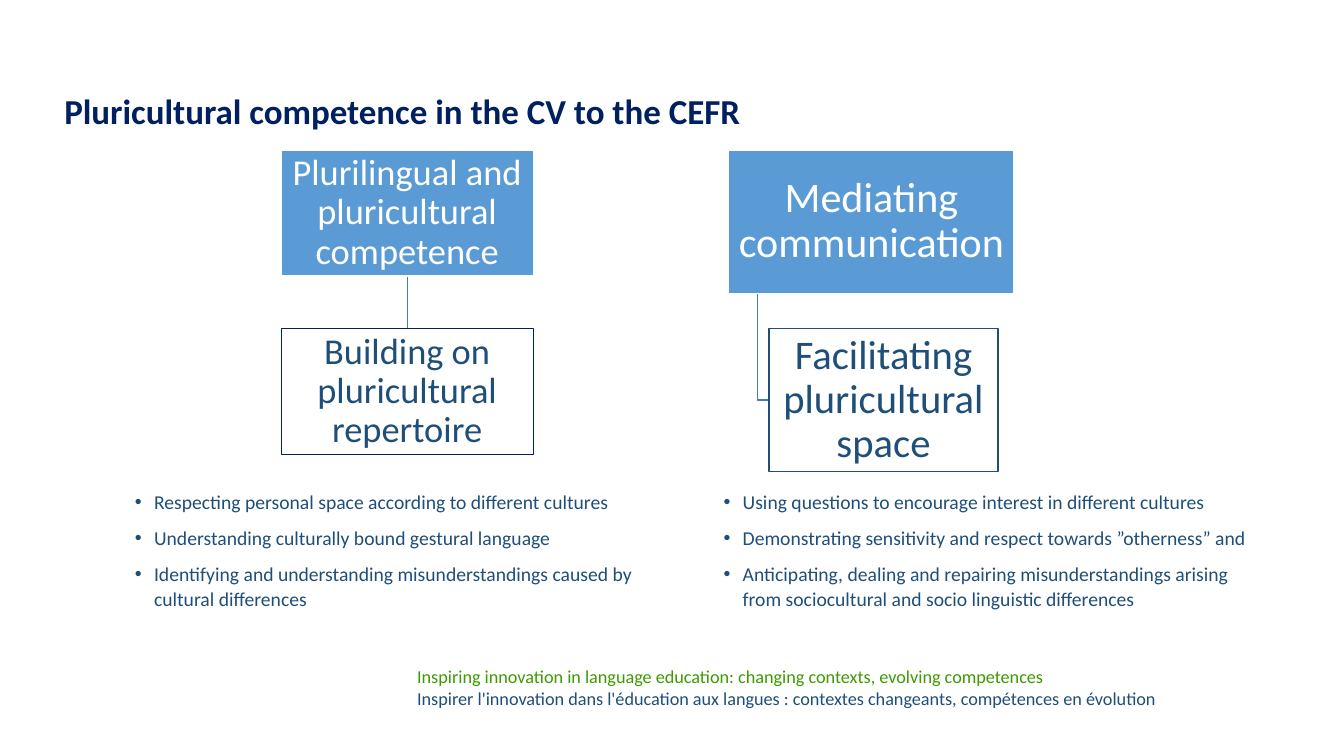
from pptx import Presentation
from pptx import util as u
from pptx.dml.color import RGBColor
from pptx.enum import shapes, text
from pptx.oxml.ns import qn
from lxml import etree

NAVY = RGBColor(0x00, 0x20, 0x60)
DARK = RGBColor(0x1F, 0x4E, 0x79)
BLUE = RGBColor(0x5B, 0x9B, 0xD5)
STEEL = RGBColor(0x49, 0x7C, 0xAB)
GREEN = RGBColor(0x3C, 0x9B, 0x00)
WHITE = RGBColor(0xFF, 0xFF, 0xFF)

deck = Presentation()
deck.slide_width, deck.slide_height = u.Inches(13.33), u.Inches(7.5)
slide = deck.slides.add_slide(deck.slide_layouts[6])
items = slide.shapes

# Grid of 100 columns by 100 rows
COL, ROW = deck.slide_width / 100, deck.slide_height / 100


def place(x, y, w, h):
    return [round(n) for n in (x * COL, y * ROW, w * COL, h * ROW)]


def write(shape, lines, size, colors, bold=False, align=None, anchor="TOP",
          pad=(0.1, 0.05), space=None, after=None, bullet=False):
    frame = shape.text_frame
    frame.word_wrap = True
    frame.vertical_anchor = text.MSO_ANCHOR[anchor]
    frame.margin_left = frame.margin_right = u.Inches(pad[0])
    frame.margin_top = frame.margin_bottom = u.Inches(pad[1])
    for i, line in enumerate(lines):
        para = frame.add_paragraph() if i else frame.paragraphs[0]
        para.alignment, para.line_spacing = align, space
        if after:
            para.space_after = u.Pt(after)
        if bullet:
            props = para._p.get_or_add_pPr()
            indent = u.Inches(0.19)
            props.set("marL", str(indent))
            props.set("indent", str(-indent))
            etree.SubElement(props, qn("a:buFont")).set("typeface", "Arial")
            etree.SubElement(props, qn("a:buChar")).set("char", "•")
        run = para.add_run()
        run.text = line
        run.font.name, run.font.size, run.font.bold = "Calibri", u.Pt(size), bold
        run.font.color.rgb = colors[i % len(colors)]


# Footer in two languages
write(items.add_textbox(*place(30.3, 87.33, 59.4, 7.2)),
      ["Inspiring innovation in language education: changing contexts, evolving competences",
       "Inspirer l'innovation dans l'éducation aux langues : contextes changeants, compétences en évolution"],
      13, [GREEN, DARK])

# Title
write(items.add_textbox(*place(4.05, 5.33, 92.03, 19.33)),
      ["Pluricultural competence in the CV to the CEFR"],
      25, [NAVY], bold=True, anchor="MIDDLE", space=0.9)

# Links between the boxes
TOP, LOW = 19.87, 43.47
LEFT, WIDE, HIGH = 20.93, 18.75, 16.67
RIGHT, BROAD, TALL = 54.23, 21.23, 18.93
CHILD = 57.23

mid = round((LEFT + WIDE / 2) * COL)
stem = items.add_connector(shapes.MSO_CONNECTOR.STRAIGHT, mid,
                           round((TOP + HIGH) * ROW), mid, round(LOW * ROW))
etree.SubElement(stem._element.spPr, qn("a:effectLst"))

bend = RIGHT + BROAD / 10
path = [(bend, TOP + TALL), (bend, LOW + TALL / 2), (CHILD, LOW + TALL / 2)]
points = [(round(x * COL), round(y * ROW)) for x, y in path]
build = items.build_freeform(*points[0])
build.add_line_segments(points[1:], close=False)
elbow = build.convert_to_shape()
elbow.fill.background()
elbow.shadow.inherit = False
for link in (stem, elbow):
    link.line.color.rgb, link.line.width = STEEL, u.Pt(1)

# Boxes: label, place, fill, line, ink, size, padding
SLIM, FULL = (0.02, 0.02), (0.06, 0.04)
boxes = [
    ("Plurilingual and pluricultural competence", (LEFT, TOP, WIDE, HIGH),
     BLUE, WHITE, WHITE, 26, SLIM),
    ("Building on pluricultural repertoire", (LEFT, LOW, WIDE, HIGH),
     WHITE, NAVY, DARK, 26, SLIM),
    ("Mediating communication", (RIGHT, TOP, BROAD, TALL),
     BLUE, WHITE, WHITE, 30, FULL),
    ("Facilitating pluricultural space", (CHILD, LOW, 17.03, TALL),
     WHITE, DARK, DARK, 29, FULL),
]
for label, spot, fill, edge, ink, size, pad in boxes:
    box = items.add_shape(shapes.MSO_SHAPE.RECTANGLE, *place(*spot))
    box.shadow.inherit = False
    box.fill.solid()
    box.fill.fore_color.rgb = fill
    box.line.color.rgb, box.line.width = edge, u.Pt(1)
    write(box, [label], size, [ink], align=text.PP_ALIGN.CENTER,
          anchor="MIDDLE", pad=pad, space=0.9)

# Bullet lists under the boxes
lists = [
    (9.3, ["Respecting personal space according to different cultures",
           "Understanding culturally bound gestural language",
           "Identifying and understanding misunderstandings caused by cultural differences"]),
    (53.1, ["Using questions to encourage interest in different cultures",
            "Demonstrating sensitivity and respect towards ”otherness” and",
            "Anticipating, dealing and repairing misunderstandings arising from sociocultural and socio linguistic differences"]),
]
for x, lines in lists:
    write(items.add_textbox(*place(x, 63.87, 42.08, 17.6)), lines, 14, [DARK],
          space=1.07, after=8, bullet=True)

deck.save("out.pptx")
